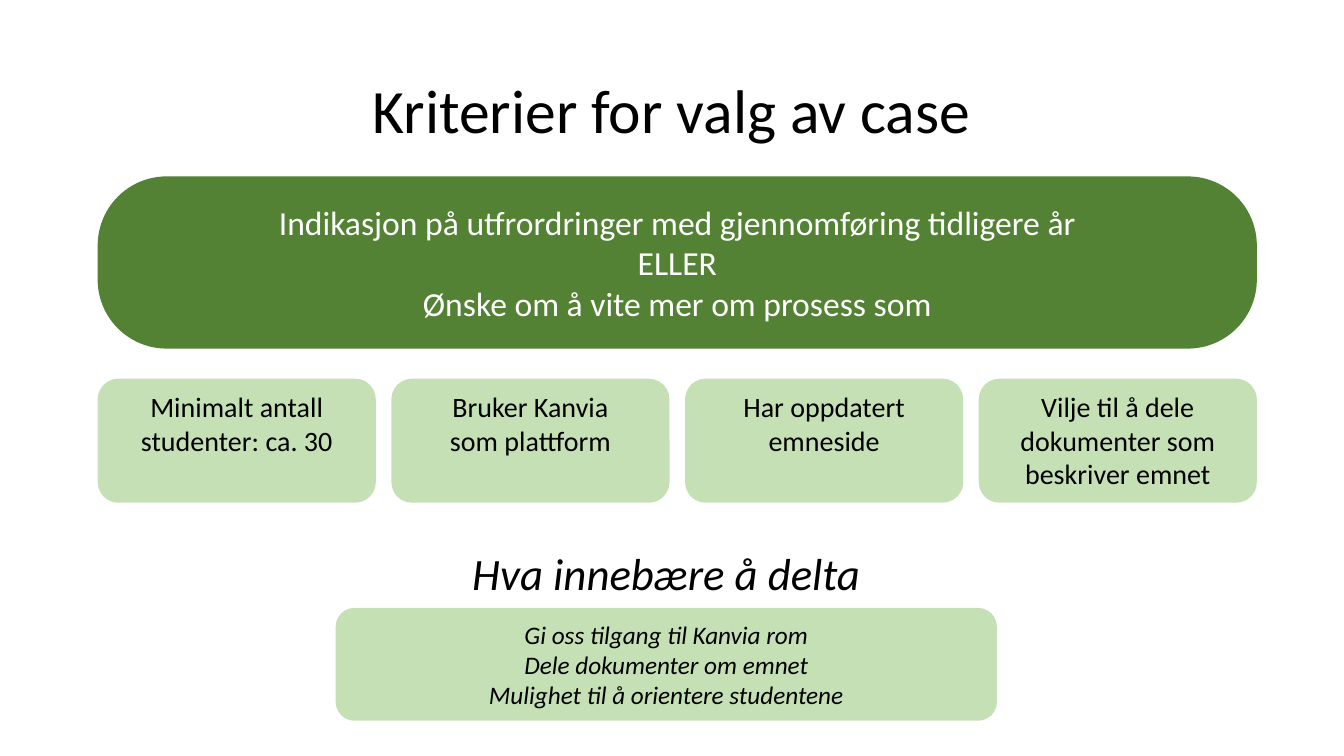
from pptx import Presentation
from pptx import util as u
from pptx.dml import color
from pptx.enum import shapes, text

COLORS = {"dark": "548235", "light": "C5E0B4", "black": "000000", "white": "FFFFFF"}
CRITERIA = [
    "Minimalt antall studenter: ca. 30",
    "Bruker Kanvia\nsom plattform",
    "Har oppdatert\nemneside",
    "Vilje til å dele dokumenter som beskriver emnet",
]


def write(frame, wording, size, ink, anchor, italic=None, spacing=None):
    """Fill a text frame with centred Calibri paragraphs."""
    frame.text = wording
    frame.word_wrap = True
    frame.vertical_anchor = anchor
    for paragraph in frame.paragraphs:
        paragraph.alignment = text.PP_ALIGN.CENTER
        paragraph.line_spacing = spacing
        for run in paragraph.runs:
            run.font.name = "Calibri"
            run.font.size = u.Pt(size)
            run.font.italic = italic
            run.font.color.rgb = color.RGBColor.from_string(COLORS[ink])


def add_heading(slide, box, wording, size, italic=None):
    """Place a centred heading in the given box."""
    heading = slide.shapes.add_textbox(*map(u.Pt, box))
    write(heading.text_frame, wording, size, "black",
          text.MSO_ANCHOR.MIDDLE, italic, 0.9)


def add_panel(slide, box, fill, wording, size, ink="black",
              anchor=text.MSO_ANCHOR.MIDDLE, italic=None, rounding=0.1667):
    """Place a filled rounded panel with text in the given box."""
    panel = slide.shapes.add_shape(
        shapes.MSO_SHAPE.ROUNDED_RECTANGLE, *map(u.Pt, box))
    panel.adjustments[0] = rounding
    panel.shadow.inherit = False
    panel.fill.solid()
    panel.fill.fore_color.rgb = color.RGBColor.from_string(COLORS[fill])
    panel.line.fill.background()
    write(panel.text_frame, wording, size, ink, anchor, italic)


def add_criteria(slide, box, card_width=198.7):
    """Spread the criterion cards evenly across the given box."""
    left, top, width, height = box
    step = (width - card_width) / (len(CRITERIA) - 1)
    for index, criterion in enumerate(CRITERIA):
        add_panel(slide, (left + index * step, top, card_width, height),
                  "light", criterion, 20, anchor=text.MSO_ANCHOR.TOP)


def main():
    """Build the case criteria slide and save it."""
    deck = Presentation()
    deck.slide_width, deck.slide_height = u.Pt(960), u.Pt(540)
    slide = deck.slides.add_slide(deck.slide_layouts[6])
    add_heading(slide, (66, 28.8, 828, 104.4), "Kriterier for valg av case", 44)
    add_panel(slide, (69.8, 126, 828, 123), "dark",
              "Indikasjon på utfrordringer med gjennomføring tidligere år\n"
              "ELLER\nØnske om å vite mer om prosess som",
              24, "white", rounding=0.401)
    add_criteria(slide, (69.8, 270.5, 828, 88.6))
    add_heading(slide, (62, 359.3, 828, 104.4), "Hva innebære å delta", 32, True)
    add_panel(slide, (239.8, 434.2, 472.3, 80.6), "light",
              "Gi oss tilgang til Kanvia rom\nDele dokumenter om emnet\n"
              "Mulighet til å orientere studentene", 18, italic=True)
    deck.save("out.pptx")


if __name__ == "__main__":
    main()
